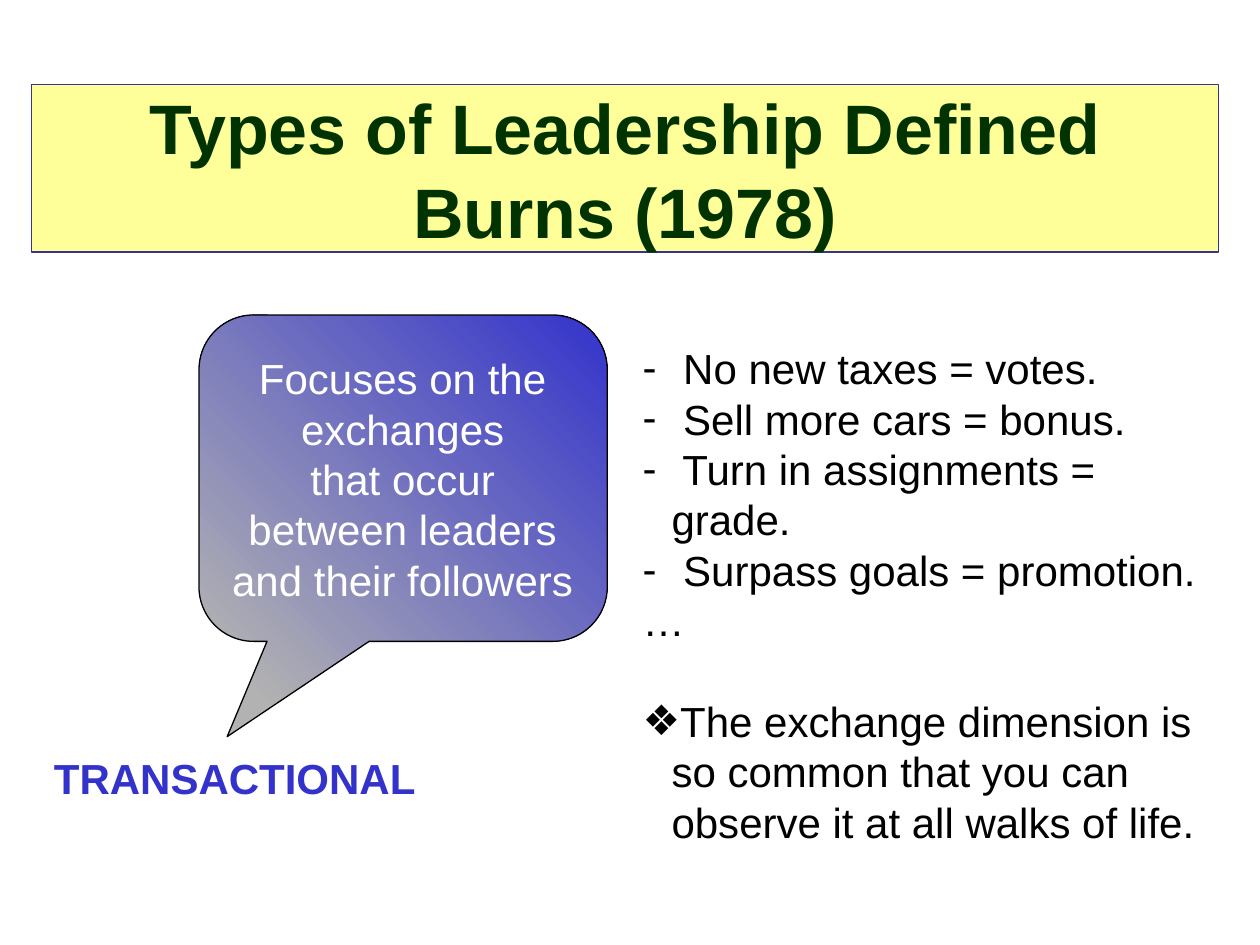
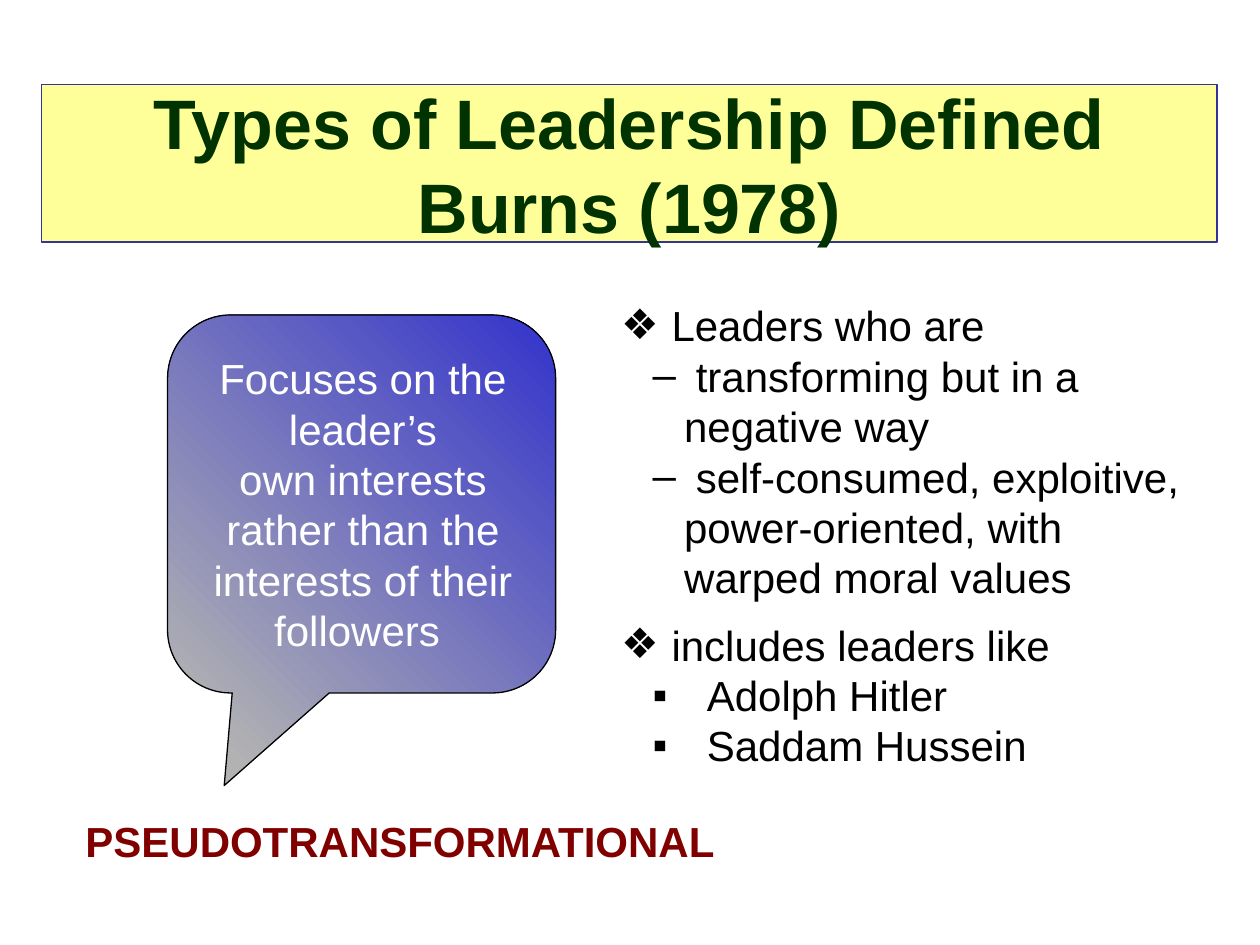
"""Build two slides on types of leadership as defined by Burns."""
from lxml import etree
from pptx import Presentation
from pptx.dml.color import RGBColor
from pptx.enum.shapes import MSO_SHAPE
from pptx.enum.text import MSO_ANCHOR, MSO_AUTO_SIZE, PP_ALIGN
from pptx.oxml.ns import qn
from pptx.util import Inches, Pt

CALLOUT = MSO_SHAPE.ROUNDED_RECTANGULAR_CALLOUT
MIDDLE, TOP = MSO_ANCHOR.MIDDLE, MSO_ANCHOR.TOP
FIXED_SIZE, GROW = MSO_AUTO_SIZE.NONE, MSO_AUTO_SIZE.SHAPE_TO_FIT_TEXT
CENTER, LEFT = PP_ALIGN.CENTER, PP_ALIGN.LEFT

FONT = "Arial"
BLACK, WHITE = "000000", "FFFFFF"
TITLE_TEXT, TITLE_FILL, TITLE_LINE = "003300", "FFFF99", "333399"
GRAY, BLUE, MAROON = "B2B2B2", "3333CC", "800000"
TITLE = "Types of Leadership Defined\vBurns (1978)"
LINE_HEIGHT = 1.2


def rgb(value):
    return RGBColor.from_string(value)


def write(shape, box, lines, color, size=24, bold=False, align=LEFT,
          anchor=TOP, auto_size=GROW, wrap=True):
    """Place a shape and fill it with uniformly formatted paragraphs."""
    shape.left, shape.top, shape.width, shape.height = map(Inches, box)
    frame = shape.text_frame
    frame.text = "\n".join(lines)
    frame.word_wrap, frame.auto_size = wrap, auto_size
    frame.vertical_anchor = anchor
    for paragraph in frame.paragraphs:
        paragraph.alignment = align
        paragraph.line_spacing = Pt(size * LINE_HEIGHT)
        paragraph.space_before = Pt(0)
        for run in paragraph.runs:
            run.font.name, run.font.size, run.font.bold = FONT, Pt(size), bold
            run.font.color.rgb = rgb(color)


# Each list line: text, bullet, left margin, hanging indent, space before
slides = [
    {
        "title_box": (0.25, 0.67, 9.42, 1.33),
        "callout_box": (1.58, 2.5, 3.24, 2.59),
        "callout_tip": (-0.431, 0.792),
        "focus_box": (1.74, 2.75, 2.91, 2.1),
        "focus_wrap": False,
        "focus": ["Focuses on the", "exchanges", "that occur",
                  "between leaders", "and their followers"],
        "label_box": (0.33, 5.92, 3.23, 0.5),
        "label": "TRANSACTIONAL",
        "label_color": BLUE,
        "list_box": (5, 2.67, 4.67, 3.69),
        "list": [
            (" No new taxes = votes.", "-", 0.23, 0.23, 0),
            (" Sell more cars = bonus.", "-", 0.23, 0.23, 0),
            (" Turn in assignments = grade.", "-", 0.23, 0.23, 0),
            (" Surpass goals = promotion.", "-", 0.23, 0.23, 0),
            ("…", None, 0.23, 0.23, 0),
            ("The exchange dimension is so common that you can observe it "
             "at all walks of life.", "❖", 0.23, 0.23, 28.8),
        ],
    },
    {
        "title_box": (0.33, 0.67, 9.33, 1.25),
        "callout_box": (1.33, 2.5, 3.08, 3),
        "callout_tip": (-0.354, 0.745),
        "focus_box": (1.42, 2.75, 2.92, 2.5),
        "focus_wrap": True,
        "focus": ["Focuses on the", "leader’s",
                  "own interests rather than the interests of their followers "],
        "label_box": (0.58, 6.42, 5.22, 0.5),
        "label": "PSEUDOTRANSFORMATIONAL",
        "label_color": MAROON,
        "list_box": (4.83, 2.33, 4.67, 3.83),
        "list": [
            ("Leaders who are", "❖", 0.4, 0.4, 0),
            (" transforming but in a negative way", "–", 0.5, 0.25, 0),
            (" self-consumed, exploitive, power-oriented, with warped moral "
             "values", "–", 0.5, 0.25, 0),
            ("includes leaders like", "❖", 0.4, 0.4, 9.6),
            ("Adolph Hitler", "▪", 0.68, 0.43, 0),
            ("Saddam Hussein", "▪", 0.68, 0.43, 0),
        ],
    },
]

presentation = Presentation()
presentation.slide_width, presentation.slide_height = Inches(10), Inches(7.5)

for content in slides:
    slide = presentation.slides.add_slide(presentation.slide_layouts[1])

    title = slide.shapes.title
    write(title, content["title_box"], [TITLE], TITLE_TEXT, size=40, bold=True,
          align=CENTER, anchor=MIDDLE, auto_size=FIXED_SIZE)
    title.fill.solid()
    title.fill.fore_color.rgb = rgb(TITLE_FILL)
    title.line.color.rgb = rgb(TITLE_LINE)
    title.line.width = Pt(1)

    callout = slide.shapes.add_shape(CALLOUT, *map(Inches, content["callout_box"]))
    callout.shadow.inherit = False
    callout.adjustments[0], callout.adjustments[1] = content["callout_tip"]
    callout.adjustments[2] = 0.167
    callout.fill.gradient()
    callout.fill.gradient_angle = 45
    for stop, color, position in zip(callout.fill.gradient_stops, (GRAY, BLUE), (0, 1)):
        stop.color.rgb = rgb(color)
        stop.position = position
    callout.line.color.rgb = rgb(BLACK)
    callout.line.width = Pt(0.75)

    focus = slide.shapes.add_textbox(0, 0, 0, 0)
    write(focus, content["focus_box"], content["focus"], WHITE, align=CENTER,
          wrap=content["focus_wrap"])

    label = slide.shapes.add_textbox(0, 0, 0, 0)
    write(label, content["label_box"], [content["label"]],
          content["label_color"], bold=True)

    body = slide.placeholders[1]
    write(body, content["list_box"], [line[0] for line in content["list"]], BLACK)
    for paragraph, line in zip(body.text_frame.paragraphs, content["list"]):
        text, bullet, margin, hanging, space_before = line
        paragraph.space_before = Pt(space_before)
        properties = paragraph._p.get_or_add_pPr()
        properties.set("marL", str(Inches(margin)))
        properties.set("indent", str(-Inches(hanging)))
        if bullet:
            font = etree.SubElement(properties, qn("a:buFont"))
            font.set("typeface", FONT)
            etree.SubElement(properties, qn("a:buChar")).set("char", bullet)
        else:
            etree.SubElement(properties, qn("a:buNone"))

presentation.save("out.pptx")
